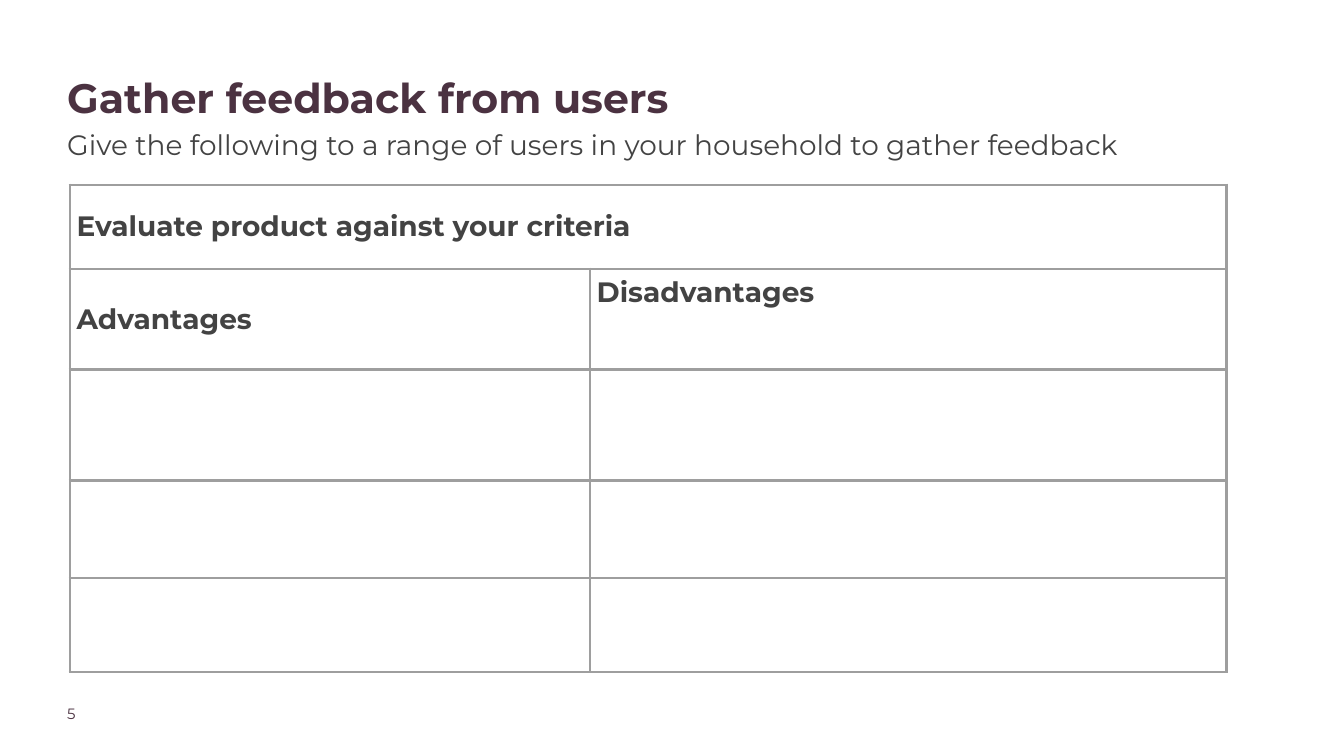
import pptx
import pptx.dml.color
import pptx.enum.text
import pptx.oxml
import pptx.oxml.ns
import pptx.util
from pptx.util import Inches

PLUM = "4B3241"
CHARCOAL = "434343"
GREY = "9E9E9E"


def colour(value):
    return pptx.dml.color.RGBColor.from_string(value)


def write(frame, text, *, size=30, ink=CHARCOAL, bold=False, font="Montserrat",
          spacing=None, after=None):
    para = frame.paragraphs[0]
    if spacing is not None:
        para.line_spacing = spacing
    if after is not None:
        para.space_after = pptx.util.Pt(after)
    span = para.add_run()
    span.text = text
    span.font.name = font
    span.font.size = pptx.util.Pt(size)
    span.font.bold = bold
    span.font.color.rgb = colour(ink)


class FeedbackSlide:
    def __init__(self, deck, border_colour=GREY, border_width=3, cell_margin=0.1):
        self.page = deck.slides.add_slide(deck.slide_layouts[6])
        self.border_colour = border_colour
        self.border_width = pptx.util.Pt(border_width)
        self.cell_margin = Inches(cell_margin)

    def text(self, left, top, width, height, words, **style):
        box = self.page.shapes.add_textbox(
            Inches(left), Inches(top), Inches(width), Inches(height))
        frame = box.text_frame
        frame.word_wrap = True
        frame.margin_left = frame.margin_right = 0
        frame.margin_top = frame.margin_bottom = 0
        write(frame, words, **style)

    def table(self, left, top, widths, heights):
        table = self.page.shapes.add_table(
            len(heights), len(widths), Inches(left), Inches(top),
            Inches(sum(widths)), Inches(sum(heights))).table
        table.first_row = False
        table.horz_banding = False
        for column, width in zip(table.columns, widths):
            column.width = Inches(width)
        for row, height in zip(table.rows, heights):
            row.height = Inches(height)
        for cell in table.iter_cells():
            self.style_cell(cell)
        return table

    def style_cell(self, cell):
        cell.margin_left = cell.margin_right = self.cell_margin
        cell.margin_top = cell.margin_bottom = self.cell_margin
        properties = cell._tc.get_or_add_tcPr()
        for side in "LRTB":
            properties.append(pptx.oxml.parse_xml(
                f'<a:ln{side} {pptx.oxml.ns.nsdecls("a")} w="{self.border_width}">'
                f'<a:solidFill><a:srgbClr val="{self.border_colour}"/></a:solidFill>'
                f'</a:ln{side}>'))
        cell.fill.background()

    def heading(self, cell, words, anchor):
        cell.vertical_anchor = anchor
        write(cell.text_frame, words, bold=True)


def main():
    deck = pptx.Presentation()
    deck.slide_width = Inches(20)
    deck.slide_height = Inches(11.25)
    slide = FeedbackSlide(deck)

    slide.text(1, 10.48, 1.57, 0.39, "5", size=16, ink=PLUM)
    slide.text(1, 0.97, 14.44, 0.86, "Gather feedback from users",
               size=44, ink=PLUM, bold=True, spacing=1.15)

    table = slide.table(1.04, 2.75, [7.74, 9.47], [1.25, 1.5, 1.65, 1.45, 1.4])
    table.cell(0, 0).merge(table.cell(0, 1))
    anchors = pptx.enum.text.MSO_ANCHOR
    slide.heading(table.cell(0, 0), "Evaluate product against your criteria", anchors.MIDDLE)
    slide.heading(table.cell(1, 0), "Advantages", anchors.MIDDLE)
    slide.heading(table.cell(1, 1), "Disadvantages", anchors.TOP)

    slide.text(1, 1.74, 15.96, 1.15,
               "Give the following to a range of users in your household to gather feedback",
               spacing=1.3, after=20)
    deck.save("out.pptx")


if __name__ == "__main__":
    main()
